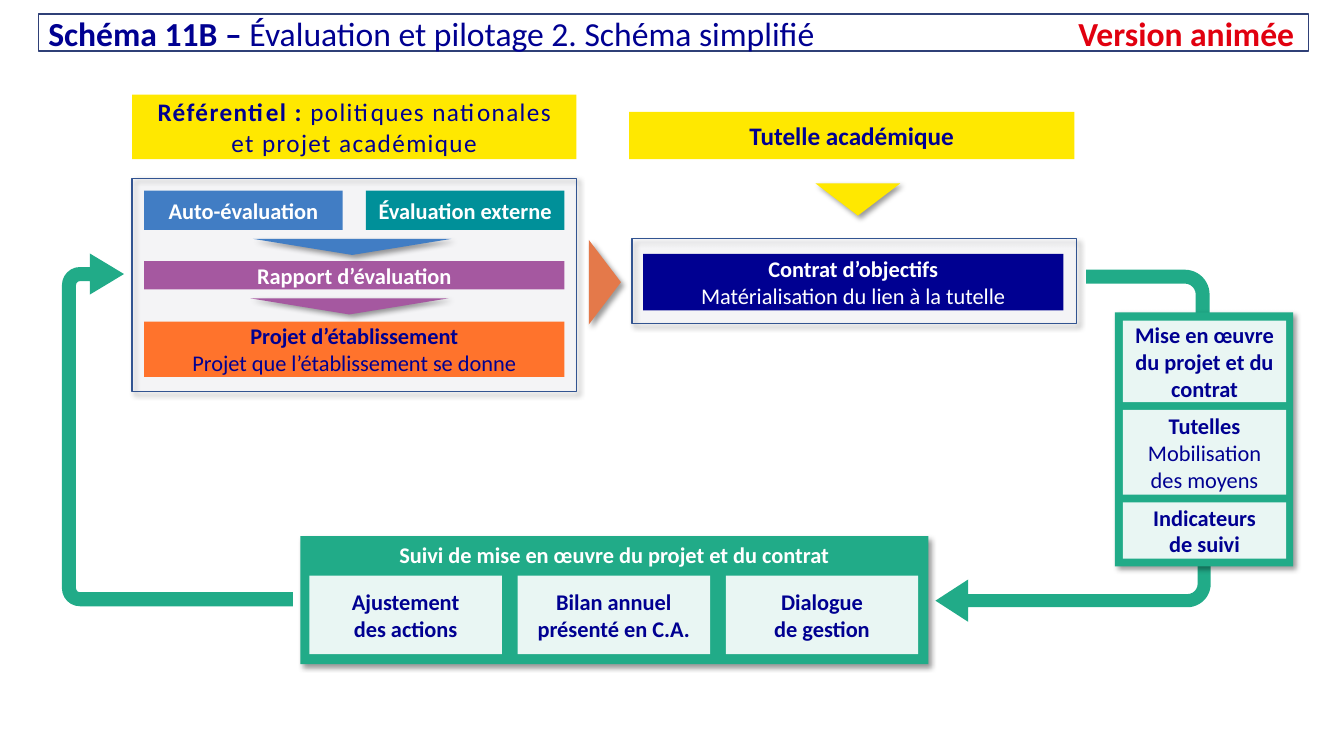
"""Build the simplified evaluation and steering diagram."""
from lxml import etree
from pptx import Presentation
from pptx.dml.color import RGBColor
from pptx.enum.shapes import MSO_SHAPE
from pptx.enum.text import MSO_ANCHOR, PP_ALIGN
from pptx.oxml.ns import qn
from pptx.util import Pt

RECT = MSO_SHAPE.RECTANGLE
DOWN = MSO_SHAPE.ISOSCELES_TRIANGLE
BENT = MSO_SHAPE.BENT_ARROW
TURN = MSO_SHAPE.U_TURN_ARROW
TOP, MID = MSO_ANCHOR.TOP, MSO_ANCHOR.MIDDLE
LEFT, MIDDLE = PP_ALIGN.LEFT, PP_ALIGN.CENTER

HUES = {
    "navy": "000091", "white": "FFFFFF", "yellow": "FFE800", "blue": "417DC4",
    "teal": "009099", "plum": "A558A0", "orange": "FF732C", "rust": "E4794A",
    "green": "21AB88", "pale": "EFEFFF", "edge": "325491", "frame": "2F4077",
    "red": "E1000F", "black": "000000",
}
BOLD, THIN = {"bold": True}, {"bold": False}
SHADE = {"blurRad": Pt(4), "dist": Pt(3), "dir": 45 * 60000, "algn": "tl", "rotWithShape": 0}

TITLE = [[("Schéma 11B – ", BOLD), ("Évaluation et pilotage 2. Schéma simplifié\t", THIN),
          ("Version animée", {"bold": True, "hue": "red"})]]
GUIDE = [[("Référentiel : ", BOLD), ("politiques nationales", THIN)],
         [("et projet académique", THIN)]]
TRUST = [[("Tutelle académique", BOLD)]]
SELF = [[("Auto-évaluation", BOLD)]]
OUTER = [[("Évaluation externe", BOLD)]]
REPORT = [[("Rapport d’évaluation", BOLD)]]
PLAN = [[("Projet d’établissement", BOLD)], [("Projet que l’établissement se donne", THIN)]]
PACT = [[("Contrat d’objectifs", BOLD)], [("Matérialisation du lien à la tutelle", THIN)]]
FOLLOW = [[("Suivi de mise en œuvre du projet et du contrat", BOLD)]]
STACK = [
    (58.3, [[("Mise en œuvre du projet et du contrat", BOLD)]]),
    (60.5, [[("Tutelles", BOLD)], [("Mobilisation des moyens", THIN)]]),
    (40.3, [[("Indicateurs", BOLD)], [("de suivi", BOLD)]]),
]
STEPS = [("Ajustement", "des actions"), ("Bilan annuel", "présenté en C.A."),
         ("Dialogue", "de gestion")]

PANELS = [(94.3, 127.4, 317.5, 152.2), (451.4, 170.6, 317.5, 60.5)]
ARROWS = [
    (BENT, (668.2, 350.6, 196.6, 93.6), 180, (0.1, 0.162, 0.25, 0.178)),
    (BENT, (763.9, 204.5, 123.1, 99.4), 90, (0.1, 0.162, 0.25, 0.178)),
    (TURN, (0.7, 224.6, 252, 164.9), 270, (0.061, 0.089, 0.148, 0.078, 0.269)),
]
HEADS = [
    ((582.5, 131, 60.5, 23), 180, "yellow"),
    ((180.7, 170.6, 141.8, 11.5), 180, "blue"),
    ((178.6, 213.1, 141.8, 11.5), 180, "plum"),
    ((401.8, 190.1, 60.5, 23), 90, "rust"),
]
LABELS = [
    ((103, 136.1, 141.8, 28.1), "blue", "white", 16, SELF),
    ((261.4, 136.1, 141.8, 28.1), "teal", "white", 16, OUTER),
    ((103, 186.5, 300.2, 20.2), "plum", "white", 16, REPORT),
    ((103, 229.7, 300.2, 39.6), "orange", "navy", 16, PLAN),
    ((459.4, 181.4, 300.2, 40.3), "navy", "white", 16, PACT),
    ((449.3, 79.9, 318.2, 33.8), "yellow", "navy", 18, TRUST),
]

deck = Presentation()
deck.slide_width, deck.slide_height = Pt(960), Pt(540)
slide = deck.slides.add_slide(deck.slide_layouts[6])


def tint(fill, hue, alpha=100):
    fill.solid()
    fill.fore_color.rgb = RGBColor.from_string(HUES[hue])
    if alpha < 100:
        clr = fill._xPr.find(".//" + qn("a:srgbClr"))
        etree.SubElement(clr, qn("a:alpha"), val=str(alpha * 1000))


def draw(kind, at, hue=None, alpha=100, edge=None, shade=False, turn=0):
    item = slide.shapes.add_shape(kind, *map(Pt, at))
    item.rotation = turn
    item.shadow.inherit = False
    if hue:
        tint(item.fill, hue, alpha)
    else:
        item.fill.background()
    if edge:
        item.line.width = Pt(1)
        tint(item.line.fill, edge)
    else:
        item.line.fill.background()
    if shade:
        glow = etree.SubElement(item._element.spPr.find(qn("a:effectLst")), qn("a:outerShdw"),
                                {key: str(val) for key, val in SHADE.items()})
        clr = etree.SubElement(glow, qn("a:srgbClr"), val=HUES["black"])
        etree.SubElement(clr, qn("a:alpha"), val="40000")
    return item


def write(item, paras, hue="navy", size=16, align=MIDDLE, space=0, **frame):
    body = item.text_frame
    for key, val in {"word_wrap": True, "vertical_anchor": MID, **frame}.items():
        setattr(body, key, val)
    for num, parts in enumerate(paras):
        para = body.add_paragraph() if num else body.paragraphs[0]
        para.alignment = align
        for text, look in parts:
            run = para.add_run()
            run.text = text
            for key, val in {"name": "Calibri", "size": Pt(size), "bold": look["bold"]}.items():
                setattr(run.font, key, val)
            tint(run.font.fill, look.get("hue", hue))
            if space:
                run._r.get_or_add_rPr().set("spc", str(space * 100))


def main():
    for at in PANELS:
        draw(RECT, at, "pale", 10, "edge", True)
    for kind, at, turn, bends in ARROWS:
        arrow = draw(kind, at, "green", turn=turn)
        for num, bend in enumerate(bends):
            arrow.adjustments[num] = bend
    for at, hue, ink, size, paras in LABELS:
        write(draw(RECT, at, hue), paras, ink, size)
    for at, turn, hue in HEADS:
        draw(DOWN, at, hue, shade=True, turn=turn)
    write(draw(RECT, (94.3, 67.7, 317.5, 46.1), "yellow"), GUIDE, size=18, space=1)

    draw(RECT, (796.3, 223.2, 127.4, 181.4), "green", shade=True)
    top = 229
    for high, paras in STACK:
        write(draw(RECT, (802.1, top, 116.6, high), "white", 90), paras)
        top += high + 5.5

    base = draw(RECT, (214.6, 383, 448.6, 91.4), "green", shade=True)
    write(base, FOLLOW, "white", vertical_anchor=TOP, margin_left=Pt(3), margin_right=Pt(3))
    for num, lines in enumerate(STEPS):
        card = draw(RECT, (221 + 148.7 * num, 411.1, 137.5, 56.2), "white", 90)
        write(card, [[(line, BOLD)] for line in lines])

    bar = draw(RECT, (27.4, 10, 907.2, 26.6), edge="frame")
    write(bar, TITLE, size=24, align=LEFT)
    tabs = etree.SubElement(bar.text_frame.paragraphs[0]._p.get_or_add_pPr(), qn("a:tabLst"))
    etree.SubElement(tabs, qn("a:tab"), pos=str(Pt(890)), algn="r")
    deck.save("out.pptx")


if __name__ == "__main__":
    main()
